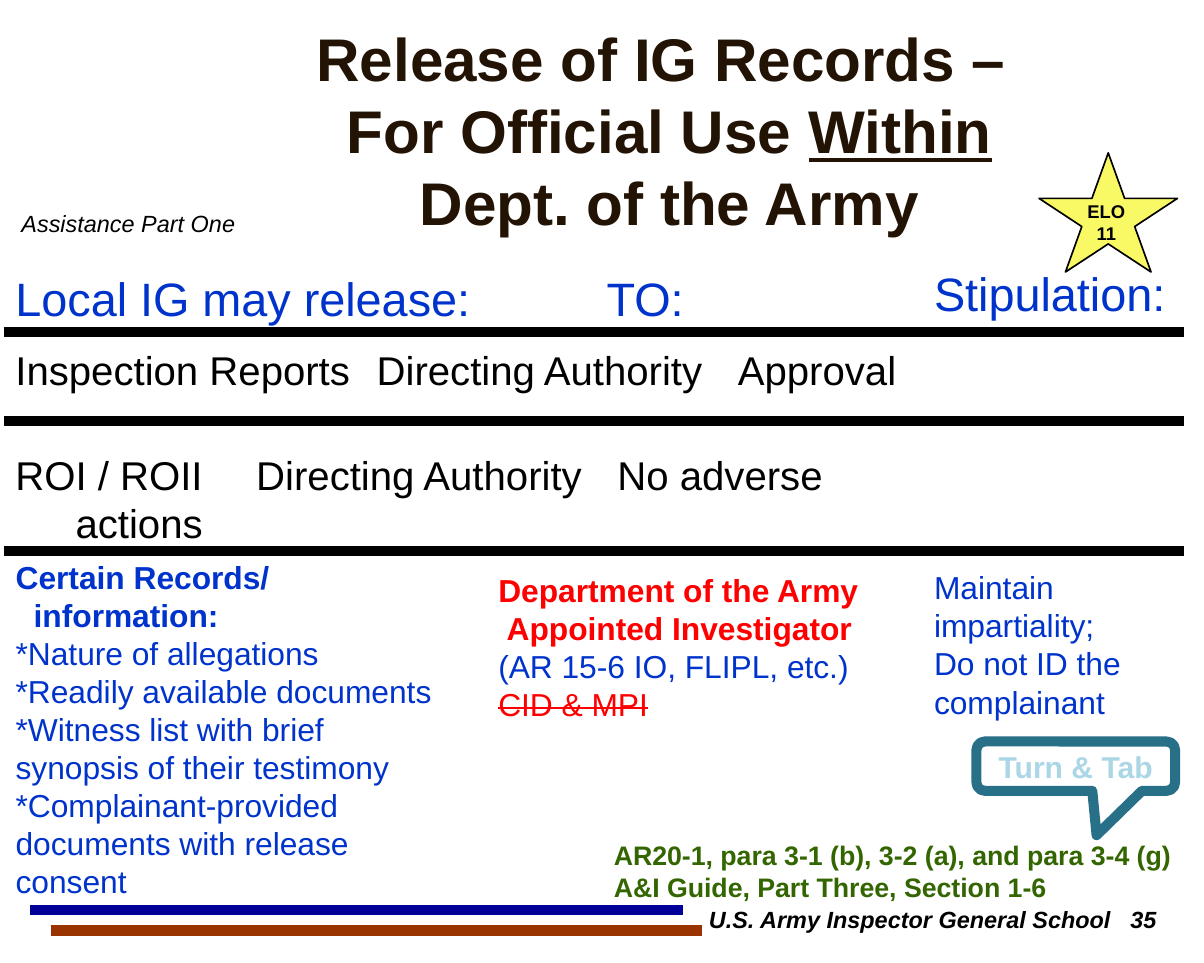
from pptx import Presentation
from pptx.dml.color import RGBColor
from pptx.enum.shapes import MSO_CONNECTOR, MSO_SHAPE
from pptx.enum.text import MSO_ANCHOR, MSO_AUTO_SIZE, PP_ALIGN
from pptx.oxml import parse_xml
from pptx.oxml.ns import nsdecls, qn
from pptx.util import Inches, Pt

COLORS = {
    "black": "000000", "title": "221304", "blue": "0033CC", "red": "FF0000",
    "green": "336600", "navy": "000099", "rust": "993300", "star": "F9F965",
    "callout": "286F88", "callout_text": "AAD6E6",
}


def add_rule(left, right, top, color):
    rule = slide.shapes.add_connector(
        MSO_CONNECTOR.STRAIGHT, Inches(left), Inches(top), Inches(right), Inches(top))
    rule.line.color.rgb = RGBColor.from_string(COLORS[color])
    rule.line.width = Pt(6)
    rule._element.spPr.append(parse_xml(f"<a:effectLst {nsdecls('a')}/>"))


def write_text(shape, box, lines, size, color, bold=False, italic=False,
               align=PP_ALIGN.LEFT, anchor=MSO_ANCHOR.TOP):
    """Place the shape and fill it with one paragraph per line."""
    shape.left, shape.top, shape.width, shape.height = [Inches(v) for v in box]
    frame = shape.text_frame
    frame.text = "\n".join(lines)
    frame.word_wrap = True
    frame.auto_size = MSO_AUTO_SIZE.NONE
    frame.vertical_anchor = anchor
    for paragraph in frame.paragraphs:
        properties = paragraph._p.get_or_add_pPr()
        properties.set("marL", "0")
        properties.set("indent", "0")
        properties.append(parse_xml(f"<a:buNone {nsdecls('a')}/>"))
        paragraph.alignment = align
        paragraph.space_before = Pt(0)
        for run in paragraph.runs:
            run.font.name = "Arial"
            run.font.size = Pt(size)
            run.font.bold = bold
            run.font.italic = italic
            run.font.color.rgb = RGBColor.from_string(COLORS[color])
    return frame.paragraphs


presentation = Presentation()
presentation.slide_width = Inches(10)
presentation.slide_height = Inches(8)
slide = presentation.slides.add_slide(presentation.slide_layouts[1])
title, records = slide.placeholders[0], slide.placeholders[1]

# Footer bars and table rules
add_rule(0.25, 5.67, 7.56, "navy")
add_rule(0.42, 5.83, 7.73, "rust")
for top in (2.76, 3.5, 4.58):
    add_rule(0.03, 9.83, top, "black")

# Title
title_lines = write_text(
    title, (1.73, 0.41, 7.66, 1.33),
    ["Release of IG Records – ", "For Official Use ", "Dept. of the Army"],
    36, "title", bold=True, align=PP_ALIGN.CENTER, anchor=MSO_ANCHOR.MIDDLE)
within = title_lines[1].add_run()
within.text = "Within"
within.font.name = "Arial"
within.font.size = Pt(36)
within.font.bold = within.font.underline = True
within.font.color.rgb = RGBColor.from_string(COLORS["title"])

# Lesson label, column headings and references
for box, lines, size, color, bold, italic in [
    ((0.08, 1.69, 4.5, 0.53), ["Assistance Part One"], 14, "black", False, True),
    ((0.03, 2.19, 4, 0.57), ["Local IG may release:"], 28, "blue", False, False),
    ((4.94, 2.19, 0.91, 0.57), ["TO:"], 28, "blue", False, False),
    ((7.66, 2.15, 2.2, 0.57), ["Stipulation:"], 28, "blue", False, False),
    ((7.66, 4.67, 2.2, 1.7), ["Maintain impartiality;", "Do not ID the complainant"],
     19, "blue", False, False),
    ((5, 6.92, 5, 0.64), ["AR20-1, para 3-1 (b), 3-2 (a), and para 3-4 (g)",
                          "A&I Guide, Part Three, Section 1-6"], 16, "green", True, False),
]:
    textbox = slide.shapes.add_textbox(0, 0, 0, 0)
    write_text(textbox, box, lines, size, color, bold, italic)

# Report rows and footer, with columns set by tab stops
report_rows = write_text(
    slide.shapes.add_textbox(0, 0, 0, 0), (0.03, 2.82, 9.83, 1.75),
    ["Inspection Reports\tDirecting Authority\tApproval",
     "ROI / ROII\tDirecting Authority\tNo adverse", "\tactions"], 24, "black")
report_rows[1].space_before = Pt(34)
footer = write_text(
    slide.shapes.add_textbox(0, 0, 0, 0), (5.79, 7.47, 4.1, 0.53),
    ["U.S. Army Inspector General School\t35"], 14, "black", bold=True, italic=True)
for paragraph, stops in [
    (report_rows[0], [(4, "l"), (7.63, "l")]),
    (report_rows[1], [(4, "l"), (7.65, "l")]),
    (report_rows[2], [(6.7, "r")]),
    (footer[0], [(3.5, "l")]),
]:
    tab_list = parse_xml(f"<a:tabLst {nsdecls('a')}/>")
    for position, alignment in stops:
        tab = tab_list.makeelement(qn("a:tab"), {"pos": str(Inches(position)), "algn": alignment})
        tab_list.append(tab)
    paragraph._p.pPr.append(tab_list)

# Records that may be released
record_lines = write_text(
    records, (0.03, 4.58, 3.8, 3.3),
    ["Certain Records/", "information:", "*Nature of allegations", "*Readily available documents",
     "*Witness list with brief synopsis of their testimony",
     "*Complainant-provided documents with release consent"], 19, "blue")

# Recipients
recipient_lines = write_text(
    slide.shapes.add_textbox(0, 0, 0, 0), (4.04, 4.69, 3.21, 1.38),
    ["Department of the Army", "Appointed Investigator", "(AR 15-6 IO, FLIPL, etc.)",
     "CID & MPI"], 19, "red")
recipient_lines[2].runs[0].font.color.rgb = RGBColor.from_string(COLORS["blue"])
recipient_lines[3].runs[0].font._element.set("strike", "sngStrike")

# Bold two-line heads with an indented second line
for lines, indent in ((record_lines, 0.15), (recipient_lines, 0.07)):
    lines[1]._p.pPr.set("marL", str(Inches(indent)))
    for paragraph in lines[:2]:
        paragraph.runs[0].font.bold = True

# Objective star
star = slide.shapes.add_shape(
    MSO_SHAPE.STAR_5_POINT, Inches(8.63), Inches(1.27), Inches(1.15), Inches(0.99))
star.shadow.inherit = False
star.fill.solid()
star.fill.fore_color.rgb = RGBColor.from_string(COLORS["star"])
star.line.color.rgb = RGBColor.from_string(COLORS["black"])
star.line.width = Pt(1)
write_text(slide.shapes.add_textbox(0, 0, 0, 0), (8.71, 1.61, 0.96, 0.47),
           ["ELO", "11"], 11, "black", bold=True, align=PP_ALIGN.CENTER)

# Turn & Tab callout
callout = slide.shapes.add_shape(MSO_SHAPE.ROUNDED_RECTANGULAR_CALLOUT, 0, 0, 0, 0)
callout.shadow.inherit = False
callout.fill.background()
callout.line.color.rgb = RGBColor.from_string(COLORS["callout"])
callout.line.width = Pt(6)
for index, value in enumerate((0.105, 1.4, 0.17)):
    callout.adjustments[index] = value
write_text(callout, (8.11, 6.16, 1.65, 0.41), ["Turn & Tab"], 18, "callout_text",
           bold=True, align=PP_ALIGN.CENTER, anchor=MSO_ANCHOR.MIDDLE)
callout.text_frame.margin_left = callout.text_frame.margin_right = 0
callout.text_frame.margin_top = callout.text_frame.margin_bottom = 0

presentation.save("out.pptx")
